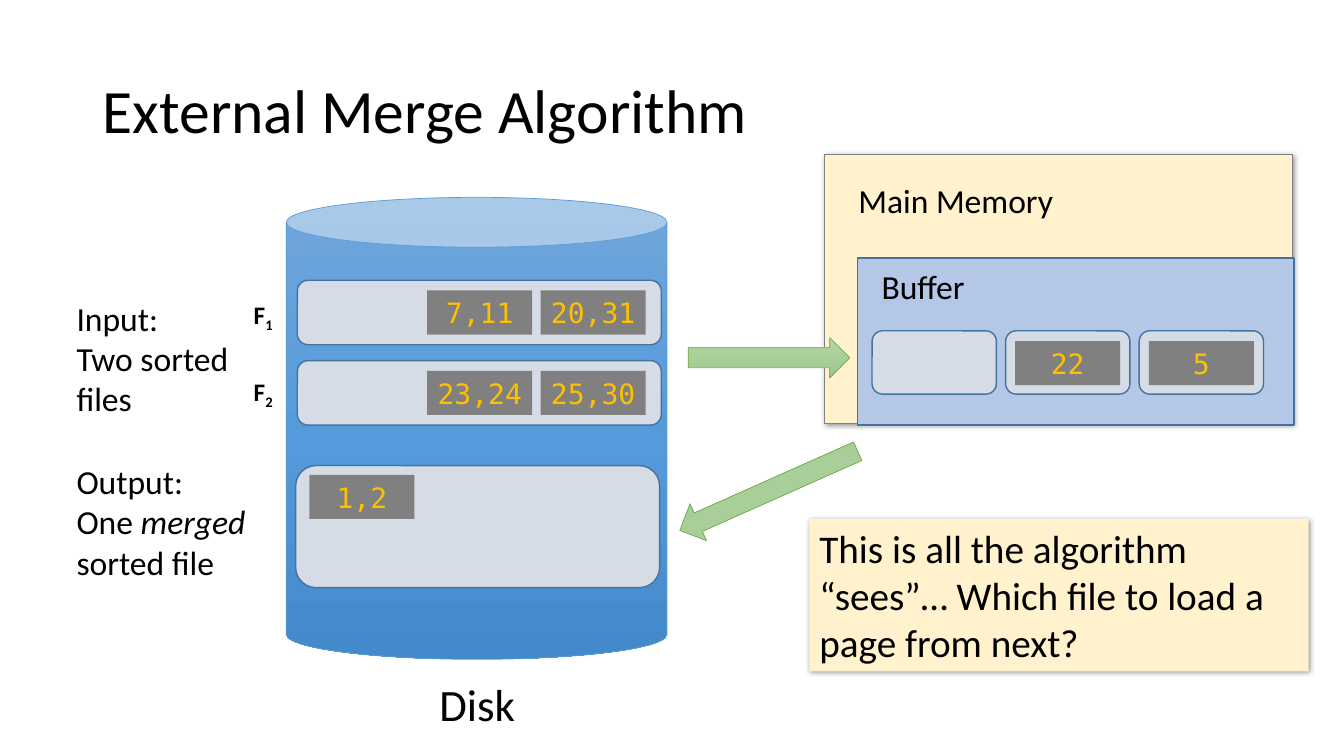
"""Build a slide on the external merge algorithm."""
from copy import deepcopy
from dataclasses import dataclass

from lxml import etree
from pptx import Presentation
from pptx.dml.color import RGBColor
from pptx.enum.shapes import MSO_SHAPE
from pptx.enum.text import MSO_ANCHOR, PP_ALIGN
from pptx.oxml.ns import qn
from pptx.util import Pt

RECT = MSO_SHAPE.RECTANGLE
ROUND = MSO_SHAPE.ROUNDED_RECTANGLE
CAN = MSO_SHAPE.CAN
ARROW = MSO_SHAPE.RIGHT_ARROW
LEFT, MID = PP_ALIGN.LEFT, PP_ALIGN.CENTER
TOP, CENTER = MSO_ANCHOR.TOP, MSO_ANCHOR.MIDDLE

BLACK = RGBColor(0x00, 0x00, 0x00)
GRAY = RGBColor(0x80, 0x80, 0x80)
GOLD = RGBColor(0xFF, 0xC0, 0x00)
CREAM = RGBColor(0xFF, 0xF2, 0xCC)
PALE = RGBColor(0xD6, 0xDC, 0xE5)
LILAC = RGBColor(0xB4, 0xC7, 0xE7)
NAVY = RGBColor(0x43, 0x73, 0x9E)
BLUE = RGBColor(0x5B, 0x9B, 0xD5)
GREEN = RGBColor(0x70, 0xAD, 0x47)
BLUES = [RGBColor(0x71, 0xA6, 0xDB), RGBColor(0x55, 0x9B, 0xDB), RGBColor(0x44, 0x8A, 0xCA)]
GREENS = [RGBColor(0xB5, 0xD5, 0xA7), RGBColor(0xAA, 0xCE, 0x9A), RGBColor(0x9C, 0xC9, 0x87)]
SANS, MONO = "Calibri", "DejaVu Sans Mono"


@dataclass
class Box:
    x: float
    y: float
    w: float
    h: float


@dataclass
class Bit:
    text: str
    bold: bool = False
    slant: bool = False
    sub: bool = False


@dataclass
class Label:
    box: Box
    lines: list[list[Bit]]
    size: float
    wrap: bool = True
    align: PP_ALIGN = LEFT
    anchor: MSO_ANCHOR = TOP
    space: float = 1.0


@dataclass
class Page:
    x: float
    y: float
    text: str


def write(frame, lines: list[list[Bit]], size: float, font: str, color: RGBColor,
          align: PP_ALIGN, anchor: MSO_ANCHOR, wrap: bool, space: float = 1.0) -> None:
    frame.word_wrap = wrap
    frame.vertical_anchor = anchor
    for i, bits in enumerate(lines):
        para = frame.add_paragraph() if i else frame.paragraphs[0]
        para.alignment = align
        para.line_spacing = space
        for bit in bits:
            run = para.add_run()
            run.text = bit.text
            run.font.size = Pt(size)
            run.font.name = font
            run.font.color.rgb = color
            run.font.bold = bit.bold
            run.font.italic = bit.slant
            if bit.sub:
                run._r.get_or_add_rPr().set("baseline", "-25000")


def draw(slide, kind: MSO_SHAPE, box: Box, fill: RGBColor | list[RGBColor],
         line: RGBColor | None = None, width: float = 1):
    shape = slide.shapes.add_shape(kind, Pt(box.x), Pt(box.y), Pt(box.w), Pt(box.h))
    shape.shadow.inherit = False
    if isinstance(fill, list):
        blend(shape, fill)
    else:
        shape.fill.solid()
        shape.fill.fore_color.rgb = fill
    if line is None:
        shape.line.fill.background()
    else:
        shape.line.color.rgb = line
        shape.line.width = Pt(width)
    return shape


def blend(shape, tones: list[RGBColor]) -> None:
    shape.fill.gradient()
    shape.fill.gradient_angle = 270
    stops = shape._element.spPr.find(qn("a:gradFill")).find(qn("a:gsLst"))
    stops.append(deepcopy(stops[0]))
    for i, (stop, tone) in enumerate(zip(shape.fill.gradient_stops, tones)):
        stop.position = i / 2
        stop.color.rgb = tone


def shade(shape) -> None:
    group = shape._element.spPr.find(qn("a:effectLst"))
    cast = etree.SubElement(group, qn("a:outerShdw"), blurRad=str(Pt(4)),
                            dist=str(Pt(1)), dir="2700000", algn="tl", rotWithShape="0")
    tone = etree.SubElement(cast, qn("a:srgbClr"), val="000000")
    etree.SubElement(tone, qn("a:alpha"), val="40000")


def label(slide, item: Label) -> None:
    box = item.box
    area = slide.shapes.add_textbox(Pt(box.x), Pt(box.y), Pt(box.w), Pt(box.h))
    write(area.text_frame, item.lines, item.size, SANS, BLACK,
          item.align, item.anchor, item.wrap, item.space)


def page(slide, item: Page) -> None:
    shape = draw(slide, RECT, Box(item.x, item.y, 75, 31.5), GRAY)
    write(shape.text_frame, [[Bit(item.text)]], 20, MONO, GOLD, MID, CENTER, False)


def main() -> None:
    deck = Presentation()
    deck.slide_width, deck.slide_height = Pt(960), Pt(540)
    slide = deck.slides.add_slide(deck.slide_layouts[6])

    disk = draw(slide, CAN, Box(204.5, 141, 272, 330), BLUES, BLUE, 0.5)
    disk.adjustments[0] = 0.131
    files = [["7,11", "20,31"], ["23,24", "25,30"]]
    for row, texts in enumerate(files):
        top = 200.2 + 57.4 * row
        draw(slide, ROUND, Box(212.4, top, 260, 46), PALE, NAVY)
        for col, text in enumerate(texts):
            page(slide, Page(305.2 + 81 * col, top + 7.3, text))
        label(slide, Label(Box(174.2, 210.2 + 54.8 * row, 28.8, 28.8),
                           [[Bit("F", bold=True), Bit(str(row + 1), bold=True, sub=True)]],
                           18, False))
    draw(slide, ROUND, Box(211.2, 332.6, 260, 87.2), PALE, NAVY)
    page(slide, Page(221, 339.1, "1,2"))

    shade(draw(slide, RECT, Box(588.6, 110.2, 334.8, 192.2), CREAM, GRAY, 0.5))
    draw(slide, RECT, Box(612.6, 184.2, 311.6, 119.3), LILAC, NAVY)
    for col, text in enumerate(["", "22", "5"]):
        left = 622.9 + 95.4 * col
        draw(slide, ROUND, Box(left, 236.3, 88.8, 45.2), PALE, NAVY)
        if text:
            page(slide, Page(left + 6.9, 243.6, text))

    draw(slide, ARROW, Box(491.6, 241.2, 115.4, 28.8), GREENS, GREEN, 0.5)
    back = draw(slide, ARROW, Box(479.6, 336.2, 139, 28.8), GREENS, GREEN, 0.5)
    back.rotation = 156

    note = draw(slide, RECT, Box(578.2, 370.6, 356.6, 109), CREAM)
    shade(note)
    ask = "This is all the algorithm “sees”… Which file to load a page from next?"
    write(note.text_frame, [[Bit(ask)]], 28, SANS, BLACK, LEFT, CENTER, True)

    labels = [
        Label(Box(66.2, 28.8, 828, 104.4), [[Bit("External Merge Algorithm")]], 44,
              anchor=CENTER, space=0.9),
        Label(Box(306, 479.6, 69.8, 46), [[Bit("Disk")]], 32, align=MID),
        Label(Box(606, 124.9, 154.8, 36), [[Bit("Main Memory")]], 24, False),
        Label(Box(622.6, 186.4, 75, 36), [[Bit("Buffer")]], 24, False),
        Label(Box(47.6, 209, 144.8, 94.4), [[Bit("Input:")], [Bit("Two sorted files")]], 24),
        Label(Box(47.6, 325.8, 144.8, 94.4),
              [[Bit("Output:")],
               [Bit("One "), Bit("merged", slant=True), Bit(" sorted file")]], 24),
    ]
    for item in labels:
        label(slide, item)
    deck.save("out.pptx")


if __name__ == "__main__":
    main()
